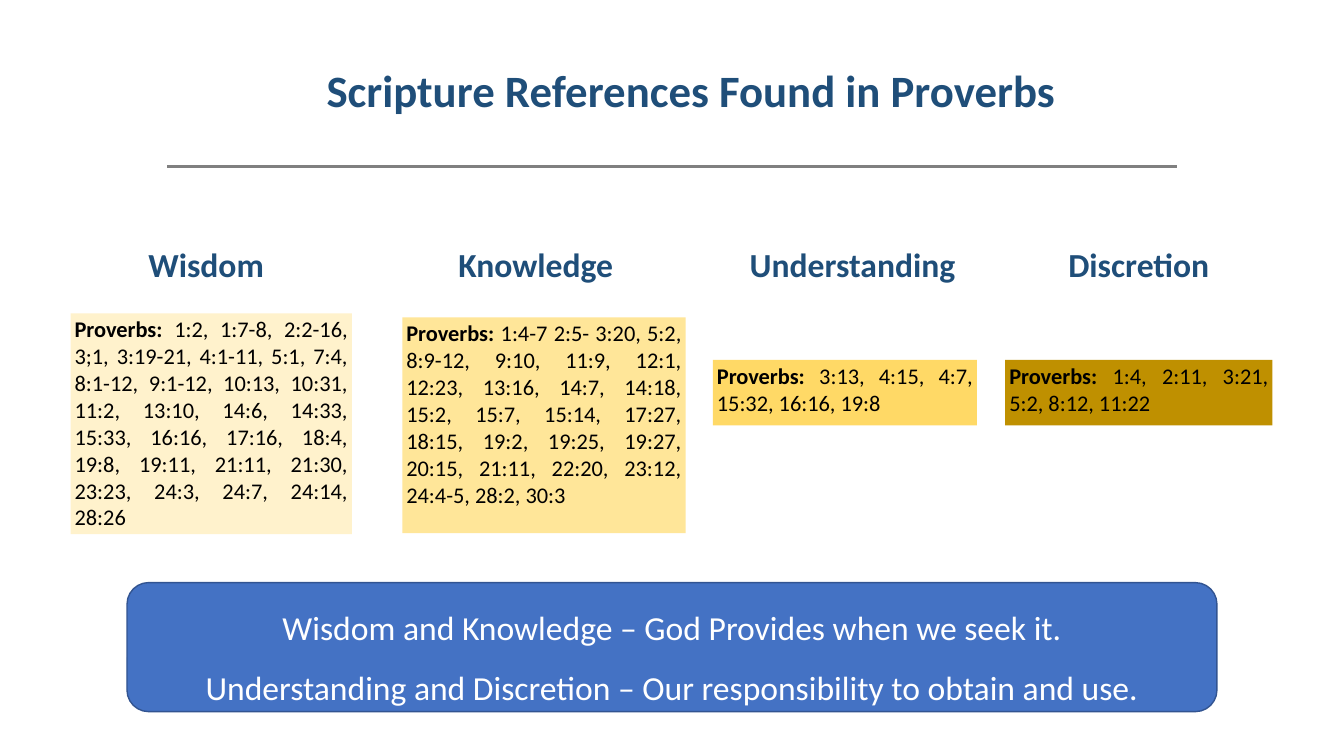
from lxml import etree
from pptx import Presentation
from pptx.dml.color import RGBColor
from pptx.enum.shapes import MSO_CONNECTOR, MSO_SHAPE
from pptx.enum.text import MSO_ANCHOR, PP_ALIGN
from pptx.oxml.ns import qn
from pptx.util import Inches, Pt

STRAIGHT = MSO_CONNECTOR.STRAIGHT
RECTANGLE = MSO_SHAPE.RECTANGLE
ROUNDED = MSO_SHAPE.ROUNDED_RECTANGLE
TOP, MIDDLE = MSO_ANCHOR.TOP, MSO_ANCHOR.MIDDLE
CENTER, JUSTIFY = PP_ALIGN.CENTER, PP_ALIGN.JUSTIFY

FONT = "Calibri"
NAVY = "1F4E79"
BLACK = "000000"
HEADING_TOP, HEADING_HEIGHT = 2.4, 0.68

# heading, (left, width) of heading, fill, box of references, references
TOPICS = [
    ("Wisdom", (1.13, 1.83), "FFF2CC", (0.7, 3.11, 2.79, 2.19),
     "1:2, 1:7-8, 2:2-16, 3;1, 3:19-21, 4:1-11, 5:1, 7:4, 8:1-12, 9:1-12, "
     "10:13, 10:31, 11:2, 13:10, 14:6, 14:33, 15:33, 16:16, 17:16, 18:4, "
     "19:8, 19:11, 21:11, 21:30, 23:23, 24:3, 24:7, 24:14, 28:26 "),
    ("Knowledge", (4.4, 1.83), "FFE699", (3.99, 3.15, 2.81, 2.14),
     "1:4-7 2:5- 3:20, 5:2, 8:9-12, 9:10, 11:9, 12:1, 12:23, 13:16, 14:7, "
     "14:18, 15:2, 15:7, 15:14, 17:27, 18:15, 19:2, 19:25, 19:27, 20:15, "
     "21:11, 22:20, 23:12, 24:4-5, 28:2, 30:3"),
    ("Understanding", (7.38, 2.15), "FFD966", (7.07, 3.57, 2.62, 0.65),
     "3:13, 4:15, 4:7, 15:32, 16:16, 19:8"),
    ("Discretion", (10.38, 1.83), "BF9000", (9.97, 3.57, 2.65, 0.65),
     "1:4, 2:11, 3:21, 5:2, 8:12, 11:22"),
]
BANNER_LINES = [
    "Wisdom and Knowledge – God Provides when we seek it.",
    "Understanding and Discretion – Our responsibility to obtain and use.",
]


def color(value):
    return RGBColor.from_string(value)


def inches(box):
    return [Inches(value) for value in box]


def prepare_frame(shape, anchor=TOP, side=0.04, edge=0.02):
    frame = shape.text_frame
    frame.word_wrap = True
    frame.vertical_anchor = anchor
    frame.margin_left = frame.margin_right = Inches(side)
    frame.margin_top = frame.margin_bottom = Inches(edge)
    return frame


def style_paragraph(paragraph, size, text_color, alignment=CENTER, bold=None):
    paragraph.alignment = alignment
    font = paragraph.font
    font.name, font.size, font.bold = FONT, Pt(size), bold
    font.color.rgb = color(text_color)


def add_heading(shapes, box, text, size):
    frame = prepare_frame(shapes.add_textbox(*inches(box)))
    paragraph = frame.paragraphs[0]
    paragraph.text = text
    style_paragraph(paragraph, size, NAVY, bold=True)


def add_filled_shape(shapes, kind, box, fill):
    shape = shapes.add_shape(kind, *inches(box))
    shape.shadow.inherit = False
    shape.fill.solid()
    shape.fill.fore_color.rgb = color(fill)
    shape.line.fill.background()
    return shape


def add_references(shapes, box, fill, references):
    shape = add_filled_shape(shapes, RECTANGLE, box, fill)
    paragraph = prepare_frame(shape).paragraphs[0]
    style_paragraph(paragraph, 16, BLACK, JUSTIFY)
    for text, bold in (("Proverbs: ", True), (references, False)):
        run = paragraph.add_run()
        run.text = text
        run.font.bold = bold


def add_topic(slide, heading, heading_span, fill, box, references):
    """Group a heading with its box of references."""
    shapes = slide.shapes.add_group_shape().shapes
    add_references(shapes, box, fill, references)
    left, width = heading_span
    add_heading(shapes, (left, HEADING_TOP, width, HEADING_HEIGHT), heading, 24)


def add_rule(slide, left, right, top):
    rule = slide.shapes.add_connector(STRAIGHT, *inches((left, top, right, top)))
    rule.line.color.rgb = color("808080")
    rule.line.width = Pt(2.5)
    etree.SubElement(rule.element.spPr, qn("a:effectLst"))


def add_banner(slide, box, lines):
    shape = add_filled_shape(slide.shapes, ROUNDED, box, "4472C4")
    shape.line.color.rgb = color("325491")
    shape.line.width = Pt(1)
    frame = prepare_frame(shape, MIDDLE, 0.1, 0.05)
    frame.text = "\n".join(lines)
    for paragraph in frame.paragraphs:
        style_paragraph(paragraph, 24, "FFFFFF")
        paragraph.line_spacing = 1.5


def main():
    presentation = Presentation()
    presentation.slide_width = Inches(13.33)
    presentation.slide_height = Inches(7.5)
    slide = presentation.slides.add_slide(presentation.slide_layouts[6])
    add_rule(slide, 1.66, 11.67, 1.65)
    for topic in TOPICS:
        add_topic(slide, *topic)
    add_heading(slide.shapes, (2.75, 0.6, 8.21, 0.57),
                "Scripture References Found in Proverbs", 32)
    add_banner(slide, (1.26, 5.78, 10.81, 1.28), BANNER_LINES)
    presentation.save("out.pptx")


if __name__ == "__main__":
    main()
